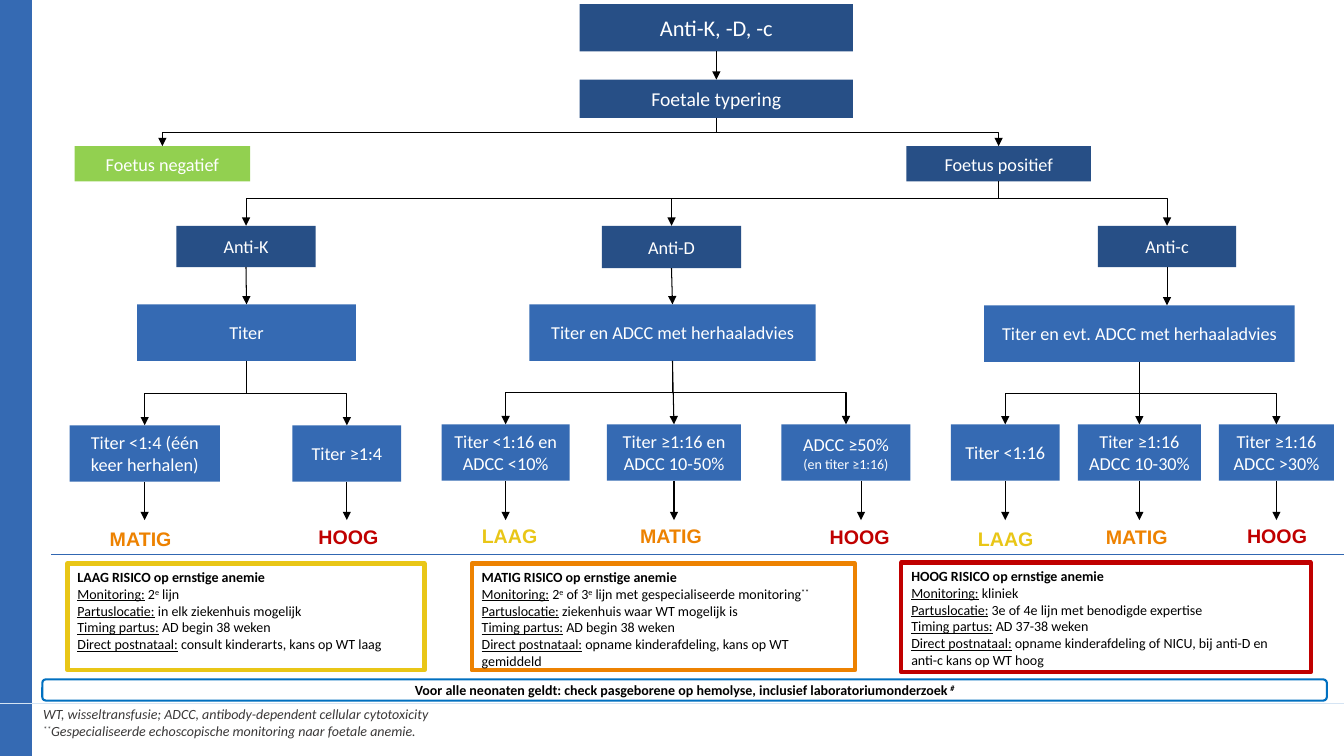
from lxml import etree
from pptx import Presentation
from pptx.dml.color import RGBColor
from pptx.enum.shapes import MSO_CONNECTOR, MSO_SHAPE
from pptx.enum.text import MSO_ANCHOR, PP_ALIGN
from pptx.oxml.ns import qn
from pptx.util import Inches, Pt


class Theme:
    navy, blue, green = "274F86", "356AB3", "92D050"
    white, black, grey = "FFFFFF", "000000", "3A3838"
    pale, frame, rule = "D5E4F3", "0070C0", "3167B2"
    risk = {"LAAG": "E9C617", "MATIG": "ED8201", "HOOG": "C00000"}
    body, label = "Calibri", "Arial"
    title, heading, node, remark, note, outcome = 16, 14, 13, 10, 10, 14
    thin, medium, thick = 0.75, 1.5, 3


# Content: boxes as name: (lines, left, top, width, height, fill, size)
UPPER_BOXES = {
    "antibodies": (["Anti-K, -D, -c"], 5.75, 0.04, 2.71, 0.47, Theme.navy, Theme.title),
    "typing": (["Foetale typering"], 5.75, 0.79, 2.71, 0.38, Theme.navy, Theme.heading),
    "negative": (["Foetus negatief"], 0.74, 1.45, 1.74, 0.35, Theme.green, Theme.node),
    "positive": (["Foetus positief"], 8.99, 1.45, 1.83, 0.35, Theme.navy, Theme.node),
    "K": (["Anti-K"], 1.75, 2.24, 1.38, 0.41, Theme.navy, Theme.node),
    "D": (["Anti-D"], 5.97, 2.24, 1.38, 0.42, Theme.navy, Theme.node),
    "c": (["Anti-c"], 10.89, 2.24, 1.37, 0.41, Theme.navy, Theme.node),
    "K test": (["Titer"], 1.36, 3.02, 2.17, 0.56, Theme.blue, Theme.node),
    "D test": (["Titer en ADCC met herhaaladvies"], 5.25, 3.02, 2.84, 0.56,
               Theme.blue, Theme.node),
    "c test": (["Titer en evt. ADCC met herhaaladvies"], 9.76, 3.03, 3.08, 0.56,
               Theme.blue, Theme.node),
}
# Parent, child, share of the drop before the elbow turns
LINKS = [
    ("antibodies", "typing", 0.5), ("typing", "negative", 0.5), ("typing", "positive", 0.5),
    ("positive", "K", 0.38), ("positive", "D", 0.38), ("positive", "c", 0.38),
    ("K", "K test", 0.5), ("D", "D test", 0.5),
]
# Test, lines, left, top, width, risk, label left, label top, label width, arrow shift
RESULTS = [
    ("K test", ["Titer <1:4 (één keer herhalen)"], 0.69, 4.22, 1.49, "MATIG", 0.99, 5.18, 0.87, 0),
    ("K test", ["Titer ≥1:4"], 2.9, 4.22, 1.08, "HOOG", 3.06, 5.16, 0.92, 0),
    ("D test", ["Titer <1:16 en ADCC <10%"], 4.38, 4.21, 1.27, "LAAG", 4.68, 5.15, 0.78, 0),
    ("D test", ["Titer ≥1:16 en ADCC 10-50%"], 6.02, 4.21, 1.33, "MATIG", 6.25, 5.15, 0.87, 0),
    ("D test", ["ADCC ≥50%", "(en titer ≥1:16)"], 7.75, 4.21, 1.28, "HOOG", 8.13, 5.16, 0.81, 0.15),
    ("c test", ["Titer <1:16"], 9.43, 4.21, 1.08, "LAAG", 9.6, 5.18, 0.81, 0),
    ("c test", ["Titer ≥1:16", "ADCC 10-30%"], 10.69, 4.21, 1.22, "MATIG", 10.87, 5.16, 0.83, 0),
    ("c test", ["Titer ≥1:16", "ADCC >30%"], 12.09, 4.21, 1.14, "HOOG", 12.27, 5.15, 0.81, 0),
]
RESULT_HEIGHT, ARROW_END = 0.56, 5.16

# Rich text: paragraphs of (text, marks); b bold, i italic, u underline, ^ raised
RISK_BOXES = [
    ("LAAG", 0.67, 5.59, 3.54, 1.06, [
        [("LAAG RISICO op ernstige anemie", "b")],
        [("Monitoring:", "u"), (" 2", ""), ("e", "^"), (" lijn", "")],
        [("Partuslocatie:", "u"), (" in elk ziekenhuis mogelijk", "")],
        [("Timing partus:", "u"), (" AD begin 38 weken", "")],
        [("Direct postnataal:", "u"), (" consult kinderarts, kans op WT laag", "")]]),
    ("MATIG", 4.68, 5.59, 3.8, 1.06, [
        [("MATIG RISICO op ernstige anemie", "b")],
        [("Monitoring:", "u"), (" 2", ""), ("e", "^"), (" of 3", ""), ("e", "^"),
         (" lijn met gespecialiseerde monitoring", ""), ("**", "^")],
        [("Partuslocatie:", "u"), (" ziekenhuis waar WT mogelijk is", "")],
        [("Timing partus:", "u"), (" AD begin 38 weken", "")],
        [("Direct postnataal:", "u"), (" opname kinderafdeling, kans op WT gemiddeld", "")]]),
    ("HOOG", 8.94, 5.58, 4.06, 1.09, [
        [("HOOG RISICO op ernstige anemie", "b")],
        [("Monitoring:", "u"), (" kliniek", "")],
        [("Partuslocatie:", "u"), (" 3e of 4e lijn met benodigde expertise", "")],
        [("Timing partus:", "u"), (" AD 37-38 weken", "")],
        [("Direct postnataal:", "u"), (" opname kinderafdeling of NICU, bij anti-D en", "")],
        [("anti-c kans op WT hoog", "")]]),
]
ALL_NEONATES = [[("Voor alle neonaten geldt: check pasgeborene op hemolyse, "
                  "inclusief laboratoriumonderzoek ", "b"), ("#", "bi^")]]
FOOTNOTES = [
    [("WT, wisseltransfusie; ADCC, antibody-dependent cellular cytotoxicity", "i")],
    [("**", "i^"), ("Gespecialiseerde echoscopische monitoring naar foetale anemie.", "i")],
]

deck = Presentation()
deck.slide_width, deck.slide_height = Inches(13.33), Inches(7.5)
page = deck.slides.add_slide(deck.slide_layouts[6])


def style(span, size, colour, font=Theme.body):
    span.font.name, span.font.size = font, Pt(size)
    span.font.color.rgb = RGBColor.from_string(colour)


def add_box(left, top, width, height, fill=None, line=None, weight=Theme.thin,
            kind=MSO_SHAPE.RECTANGLE):
    box = page.shapes.add_shape(kind, *map(Inches, (left, top, width, height)))
    box.shadow.inherit = False
    if fill:
        box.fill.solid()
        box.fill.fore_color.rgb = RGBColor.from_string(fill)
    else:
        box.fill.background()
    if line:
        box.line.color.rgb = RGBColor.from_string(line)
        box.line.width = Pt(weight)
    else:
        box.line.fill.background()
    return box


def add_node(lines, left, top, width, height, fill, size):
    box = add_box(left, top, width, height, fill)
    box.text_frame.text = "\n".join(lines)
    box.text_frame.vertical_anchor = MSO_ANCHOR.MIDDLE
    for para in box.text_frame.paragraphs:
        para.alignment = PP_ALIGN.CENTER
        remark = para.text.startswith("(")
        style(para.runs[0], Theme.remark if remark else size, Theme.white)
    return box


def write(box, paragraphs, colour, align=PP_ALIGN.LEFT):
    frame = box.text_frame
    frame.word_wrap = True
    for index, spans in enumerate(paragraphs):
        para = frame.add_paragraph() if index else frame.paragraphs[0]
        para.alignment = align
        for text, marks in spans:
            span = para.add_run()
            span.text = text
            style(span, Theme.note, colour)
            span.font.bold, span.font.italic = "b" in marks, "i" in marks
            span.font.underline = "u" in marks
            if "^" in marks:
                span.font._element.set("baseline", "30000")


def add_line(start, end, colour=Theme.black, arrow=True, kind=MSO_CONNECTOR.STRAIGHT):
    line = page.shapes.add_connector(kind, *start, *end)
    line.line.color.rgb = RGBColor.from_string(colour)
    line.line.width = Pt(Theme.thin)
    if arrow:
        etree.SubElement(line.line._get_or_add_ln(), qn("a:tailEnd"), type="triangle")
    etree.SubElement(line._element.spPr, qn("a:effectLst"))
    return line


def bottom_middle(box):
    return box.left + box.width // 2, box.top + box.height


def drop_arrow(box, end, shift=0):
    x, y = bottom_middle(box)
    arrow = add_line((x + Inches(shift), y), (x + Inches(shift), end))
    if not shift:
        arrow.begin_connect(box, 2)


def link(parent, child, turn=0.5):
    (x1, y1), x2, y2 = bottom_middle(parent), child.left + child.width // 2, child.top
    across, drop = abs(x2 - x1), y2 - y1
    straight = across < Inches(0.05)
    kind = MSO_CONNECTOR.STRAIGHT if straight else MSO_CONNECTOR.ELBOW
    line = add_line((x1, y1), (x2, y2), kind=kind)
    line.begin_connect(parent, 2)
    line.end_connect(child, 0)
    if straight:
        return
    # Turn the elbow so that it leaves downwards
    line.left, line.top = (x1 + x2 - drop) // 2, (y1 + y2 - across) // 2
    line.width, line.height = drop, across
    frame = line._element.spPr.find(qn("a:xfrm"))
    rightward = x2 > x1
    frame.set("rot", str((270 if rightward else 90) * 60000))
    frame.set("flipH", "1" if rightward else "0")
    frame.set("flipV", "0")
    guides = line._element.spPr.find(qn("a:prstGeom")).get_or_add_avLst()
    etree.SubElement(guides, qn("a:gd"), name="adj1", fmla=f"val {round(turn * 100000)}")


# Side band and rules
add_box(0, 0, 0.31, 7.5, Theme.blue, Theme.blue, 1)
for left, y, colour in [(0, 6.98, Theme.pale), (0.51, 5.5, Theme.rule)]:
    add_line((Inches(left), Inches(y)), (deck.slide_width, Inches(y)), colour, arrow=False)

# Decision tree; the Anti-c arrow meets its test box off centre
nodes = {name: add_node(*values) for name, values in UPPER_BOXES.items()}
for parent, child, turn in LINKS:
    link(nodes[parent], nodes[child], turn)
drop_arrow(nodes["c"], nodes["c test"].top)

# Test results, each with an arrow to its risk label
for test, lines, left, top, width, risk, label_left, label_top, label_width, shift in RESULTS:
    result = add_node(lines, left, top, width, RESULT_HEIGHT, Theme.blue, Theme.node)
    link(nodes[test], result)
    drop_arrow(result, Inches(ARROW_END), shift)
    label = page.shapes.add_textbox(*map(Inches, (label_left, label_top, label_width, 0.34)))
    label.text_frame.text = risk
    span = label.text_frame.paragraphs[0].runs[0]
    style(span, Theme.outcome, Theme.risk[risk], Theme.label)
    span.font.bold = True

# Risk explanations
for risk, left, top, width, height, paragraphs in RISK_BOXES:
    box = add_box(left, top, width, height, line=Theme.risk[risk], weight=Theme.thick)
    box.text_frame.vertical_anchor = MSO_ANCHOR.TOP
    write(box, paragraphs, Theme.black)

# Advice for all newborns and footnotes
advice = add_box(0.42, 6.74, 12.74, 0.21, line=Theme.frame, weight=Theme.medium,
                 kind=MSO_SHAPE.ROUNDED_RECTANGLE)
advice.text_frame.margin_top = advice.text_frame.margin_bottom = 0
advice.text_frame.vertical_anchor = MSO_ANCHOR.MIDDLE
write(advice, ALL_NEONATES, Theme.black, PP_ALIGN.CENTER)
footnotes = page.shapes.add_textbox(*map(Inches, (0.33, 6.95, 12.91, 0.44)))
write(footnotes, FOOTNOTES, Theme.grey)

deck.save("out.pptx")
